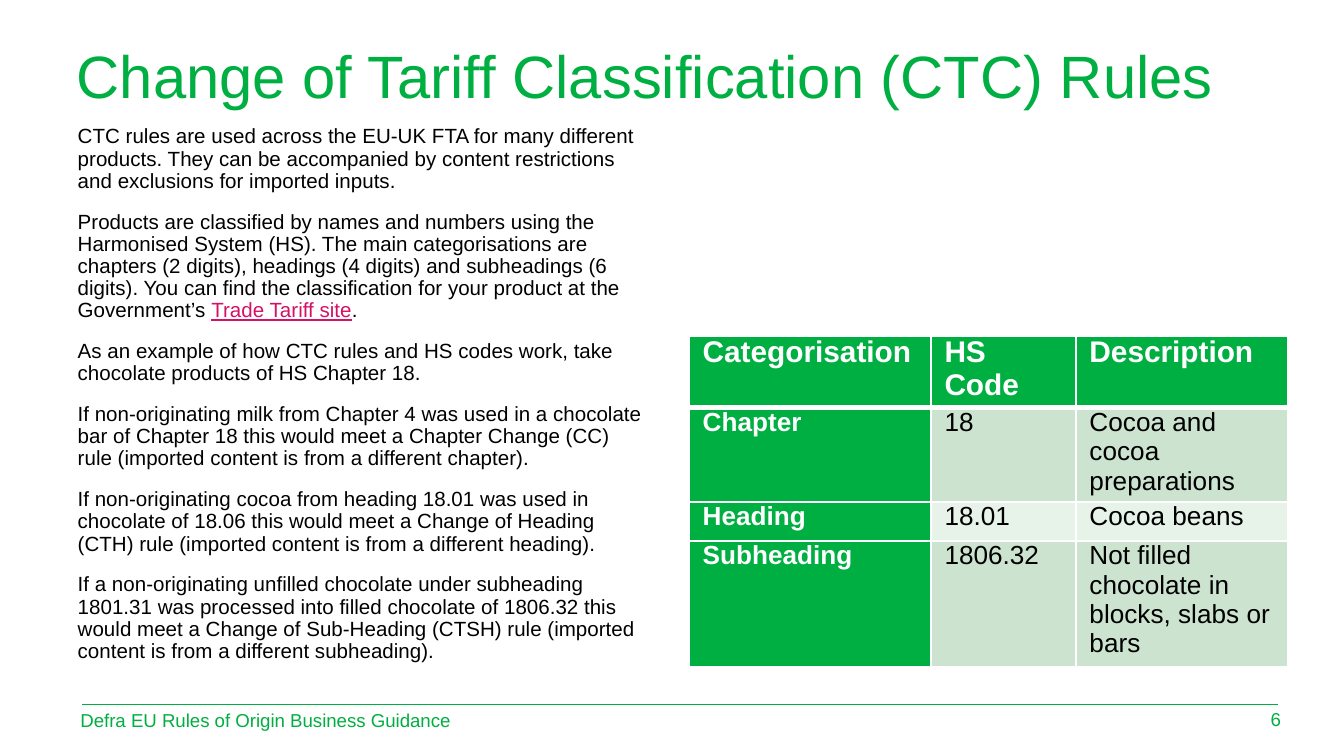
import pptx
import pptx.dml.color
import pptx.enum.shapes
import pptx.enum.text
import pptx.oxml.ns
import pptx.util
from lxml import etree

Cm = pptx.util.Cm
Pt = pptx.util.Pt
ALIGN = pptx.enum.text.PP_ALIGN
ANCHOR = pptx.enum.text.MSO_ANCHOR

GREEN, PINK, BLACK, WHITE = "00AF41", "D51067", "000000", "FFFFFF"
BANDS = ("CCE3CF", "E7F2E9")

RULES = [
    ["CTC rules are used across the EU-UK FTA for many different products. They can be "
     "accompanied by content restrictions and exclusions for imported inputs."],
    ["Products are classified by names and numbers using the Harmonised System (HS). The main "
     "categorisations are chapters (2 digits), headings (4 digits) and subheadings (6 digits). "
     "You can find the classification for your product at the Government’s ",
     ("Trade Tariff site", {"color": PINK, "underline": True}),
     "."],
    ["As an example of how CTC rules and HS codes work, take chocolate products of HS Chapter 18."],
    ["If non-originating milk from Chapter 4 was used in a chocolate bar of Chapter 18 this would "
     "meet a Chapter Change (CC) rule (imported content is from a different chapter)."],
    ["If non-originating cocoa from heading 18.01 was used in chocolate of 18.06 this would meet "
     "a Change of Heading (CTH) rule (imported content is from a different heading)."],
    ["If a non-originating unfilled chocolate under subheading 1801.31 was processed into filled "
     "chocolate of 1806.32 this would meet a Change of Sub-Heading (CTSH) rule (imported content "
     "is from a different subheading)."],
]

HS_CODES = [
    ("Categorisation", "HS Code", "Description"),
    ("Chapter", "18", "Cocoa and cocoa preparations"),
    ("Heading", "18.01", "Cocoa beans"),
    ("Subheading", "1806.32", "Not filled chocolate in blocks, slabs or bars"),
]


def rgb(hex_color):
    return pptx.dml.color.RGBColor.from_string(hex_color)


def apply(target, values):
    """Set each named attribute of target."""
    for name, value in values.items():
        setattr(target, name, value)


class GuidanceSlide:
    font = "Arial"

    def __init__(self, deck):
        self.slide = deck.slides.add_slide(deck.slide_layouts[6])

    def fill_paragraph(self, paragraph, pieces, size, color, **spacing):
        """Add runs from strings or (string, overrides) pairs."""
        apply(paragraph, spacing)
        for piece in pieces:
            words, overrides = (piece, {}) if isinstance(piece, str) else piece
            values = {"name": self.font, "size": Pt(size), **overrides}
            run_color = values.pop("color", color)
            run = paragraph.add_run()
            run.text = words
            apply(run.font, values)
            run.font.color.rgb = rgb(run_color)

    def text(self, box, paragraphs, size, color, anchor=ANCHOR.TOP, **spacing):
        frame = self.slide.shapes.add_textbox(*map(Cm, box)).text_frame
        apply(frame, {"word_wrap": True, "vertical_anchor": anchor})
        for index, pieces in enumerate(paragraphs):
            paragraph = frame.add_paragraph() if index else frame.paragraphs[0]
            self.fill_paragraph(paragraph, pieces, size, color, **spacing)

    def rule(self, left, right, top, color, width):
        line = self.slide.shapes.add_connector(
            pptx.enum.shapes.MSO_CONNECTOR.STRAIGHT, Cm(left), Cm(top), Cm(right), Cm(top))
        line.line.color.rgb = rgb(color)
        line.line.width = Pt(width)
        etree.SubElement(line._element.spPr, pptx.oxml.ns.qn("a:effectLst"))

    def border(self, cell, widths):
        """Draw white cell edges; widths maps L, R, T, B to points."""
        qn = pptx.oxml.ns.qn
        properties = cell._tc.get_or_add_tcPr()
        for side, width in widths.items():
            edge = etree.SubElement(properties, qn(f"a:ln{side}"), w=str(Pt(width)))
            fill = etree.SubElement(edge, qn("a:solidFill"))
            etree.SubElement(fill, qn("a:srgbClr"), val=WHITE)

    def table(self, left, top, widths, heights, rows):
        table = self.slide.shapes.add_table(
            len(rows), len(widths), Cm(left), Cm(top), Cm(sum(widths)), Cm(sum(heights))).table
        for column, width in zip(table.columns, widths):
            column.width = Cm(width)
        for row, height in zip(table.rows, heights):
            row.height = Cm(height)
        for r, row in enumerate(rows):
            for c, words in enumerate(row):
                heading = r == 0 or c == 0
                cell = table.cell(r, c)
                apply(cell, {"margin_left": Cm(0.25), "margin_right": Cm(0.25),
                             "margin_top": 0, "margin_bottom": 0})
                self.border(cell, {"L": 1, "R": 1, "T": 3 if r == 1 else 1,
                                   "B": 3 if r == 0 else 1})
                cell.fill.solid()
                cell.fill.fore_color.rgb = rgb(GREEN if heading else BANDS[(r - 1) % 2])
                self.fill_paragraph(cell.text_frame.paragraphs[0], [(words, {"bold": heading})],
                                    14 if r else 16, WHITE if heading else BLACK)


def main():
    deck = pptx.Presentation()
    apply(deck, {"slide_width": Cm(25.4), "slide_height": Cm(14.29)})
    page = GuidanceSlide(deck)
    page.rule(1.55, 24.16, 13.31, GREEN, 0.5)
    page.text((1.2, 0.79, 22.96, 1.4), [["Change of Tariff Classification (CTC) Rules"]],
              32, GREEN, ANCHOR.MIDDLE, line_spacing=0.9)
    page.text((1.22, 2.26, 11.28, 10.59), RULES, 11, BLACK,
              line_spacing=0.9, space_before=Pt(10))
    page.text((23.32, 13.23, 1.14, 0.76), [["6"]], 10, GREEN, ANCHOR.MIDDLE,
              alignment=ALIGN.RIGHT, line_spacing=0.9, space_after=Pt(6))
    page.table(13.03, 6.35, (4.57, 2.74, 3.99), (1.35, 1.35, 0.74, 1.35), HS_CODES)
    page.text((1.27, 13.28, 15.77, 0.76), [["Defra EU Rules of Origin Business Guidance"]],
              10, GREEN)
    deck.save("out.pptx")


if __name__ == "__main__":
    main()
